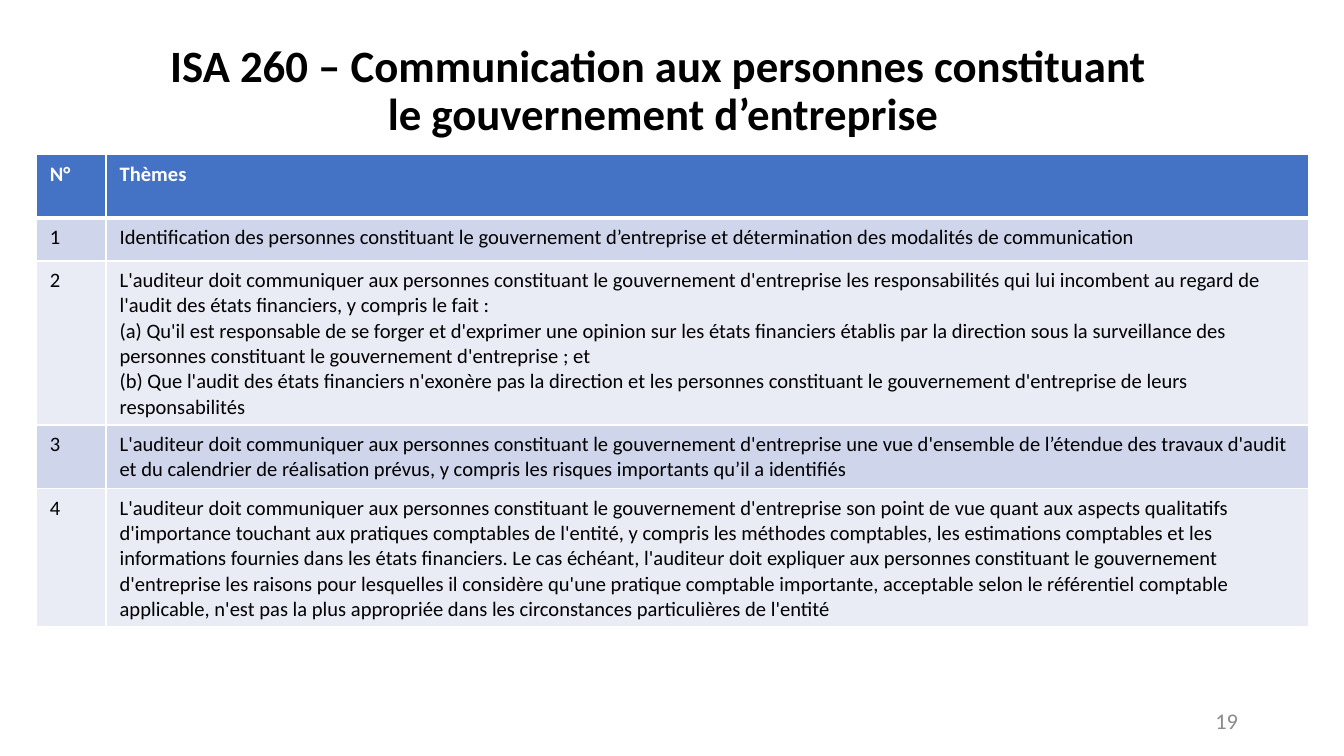
from lxml.etree import SubElement
from pptx import Presentation
from pptx.dml.color import RGBColor
from pptx.enum.text import MSO_ANCHOR as Anchor, PP_ALIGN as Align
from pptx.oxml.ns import qn
from pptx.util import Pt

COLORS = {
    "header": "4472C4",
    "odd": "CFD5EA",
    "even": "E9EBF5",
    "white": "FFFFFF",
    "black": "000000",
    "gray": "8C8C8C",
}
TITLE = "ISA 260 – Communication aux personnes constituant\v le gouvernement d’entreprise"
HEADINGS = ("N°", "Thèmes")
THEMES = [
    ["Identification des personnes constituant le gouvernement d’entreprise et détermination des modalités de communication"],
    [
        "L'auditeur doit communiquer aux personnes constituant le gouvernement d'entreprise les responsabilités qui lui incombent au regard de l'audit des états financiers, y compris le fait :",
        "(a) Qu'il est responsable de se forger et d'exprimer une opinion sur les états financiers établis par la direction sous la surveillance des personnes constituant le gouvernement d'entreprise ; et",
        "(b) Que l'audit des états financiers n'exonère pas la direction et les personnes constituant le gouvernement d'entreprise de leurs responsabilités",
    ],
    ["L'auditeur doit communiquer aux personnes constituant le gouvernement d'entreprise une vue d'ensemble de l’étendue des travaux d'audit et du calendrier de réalisation prévus, y compris les risques importants qu’il a identifiés"],
    ["L'auditeur doit communiquer aux personnes constituant le gouvernement d'entreprise son point de vue quant aux aspects qualitatifs d'importance touchant aux pratiques comptables de l'entité, y compris les méthodes comptables, les estimations comptables et les informations fournies dans les états financiers. Le cas échéant, l'auditeur doit expliquer aux personnes constituant le gouvernement d'entreprise les raisons pour lesquelles il considère qu'une pratique comptable importante, acceptable selon le référentiel comptable applicable, n'est pas la plus appropriée dans les circonstances particulières de l'entité"],
]
NUMBER_WIDTH = 37.4
ROW_HEIGHTS = (34, 23, 88, 34, 74)


def write_text(frame, paragraphs, size=11, color="black", bold=False, align=Align.LEFT, spacing=None):
    """Fill a text frame with formatted paragraphs."""
    frame.word_wrap = True
    for index, text in enumerate(paragraphs):
        paragraph = frame.add_paragraph() if index else frame.paragraphs[0]
        paragraph.text = text
        paragraph.alignment = align
        if spacing:
            paragraph.line_spacing = spacing
        for run in paragraph.runs:
            run.font.name = "Calibri"
            run.font.size = Pt(size)
            run.font.bold = bold
            run.font.color.rgb = RGBColor.from_string(COLORS[color])


def add_label(slide, box, text, **text_format):
    """Add a vertically centred text box."""
    frame = slide.shapes.add_textbox(*map(Pt, box)).text_frame
    frame.vertical_anchor = Anchor.MIDDLE
    write_text(frame, [text], **text_format)


def set_borders(cell, top, bottom):
    """Draw white borders around a cell."""
    properties = cell._tc.get_or_add_tcPr()
    for side, width in (("L", 1), ("R", 1), ("T", top), ("B", bottom)):
        line = SubElement(properties, qn(f"a:ln{side}"), w=str(Pt(width)))
        fill = SubElement(line, qn("a:solidFill"))
        SubElement(fill, qn("a:srgbClr"), val=COLORS["white"])


def add_themes_table(slide, box):
    """Add the numbered table of themes."""
    rows = [[[heading] for heading in HEADINGS]]
    rows += [[[str(number)], theme] for number, theme in enumerate(THEMES, 1)]
    table = slide.shapes.add_table(len(rows), len(HEADINGS), *map(Pt, box)).table
    table.columns[0].width = Pt(NUMBER_WIDTH)
    table.columns[1].width = Pt(box[2] - NUMBER_WIDTH)
    for index, (row, height) in enumerate(zip(rows, ROW_HEIGHTS)):
        table.rows[index].height = Pt(height)
        is_header = index == 0
        fill = "header" if is_header else "odd" if index % 2 else "even"
        for column, paragraphs in enumerate(row):
            cell = table.cell(index, column)
            set_borders(cell, top=3 if index == 1 else 1, bottom=3 if is_header else 1)
            cell.fill.solid()
            cell.fill.fore_color.rgb = RGBColor.from_string(COLORS[fill])
            write_text(cell.text_frame, paragraphs, color="white" if is_header else "black", bold=is_header)


def main():
    """Build and save the slide."""
    presentation = Presentation()
    presentation.slide_width = Pt(720)
    presentation.slide_height = Pt(405)
    slide = presentation.slides.add_slide(presentation.slide_layouts[6])
    add_label(slide, (508.3, 375.1, 162, 21.6), "19", size=12, color="gray", align=Align.RIGHT)
    add_themes_table(slide, (19.5, 82.8, 681.8, sum(ROW_HEIGHTS)))
    add_label(slide, (13, 10.1, 679, 78.5), TITLE, size=24, bold=True, align=Align.CENTER, spacing=0.9)
    presentation.save("out.pptx")


if __name__ == "__main__":
    main()
